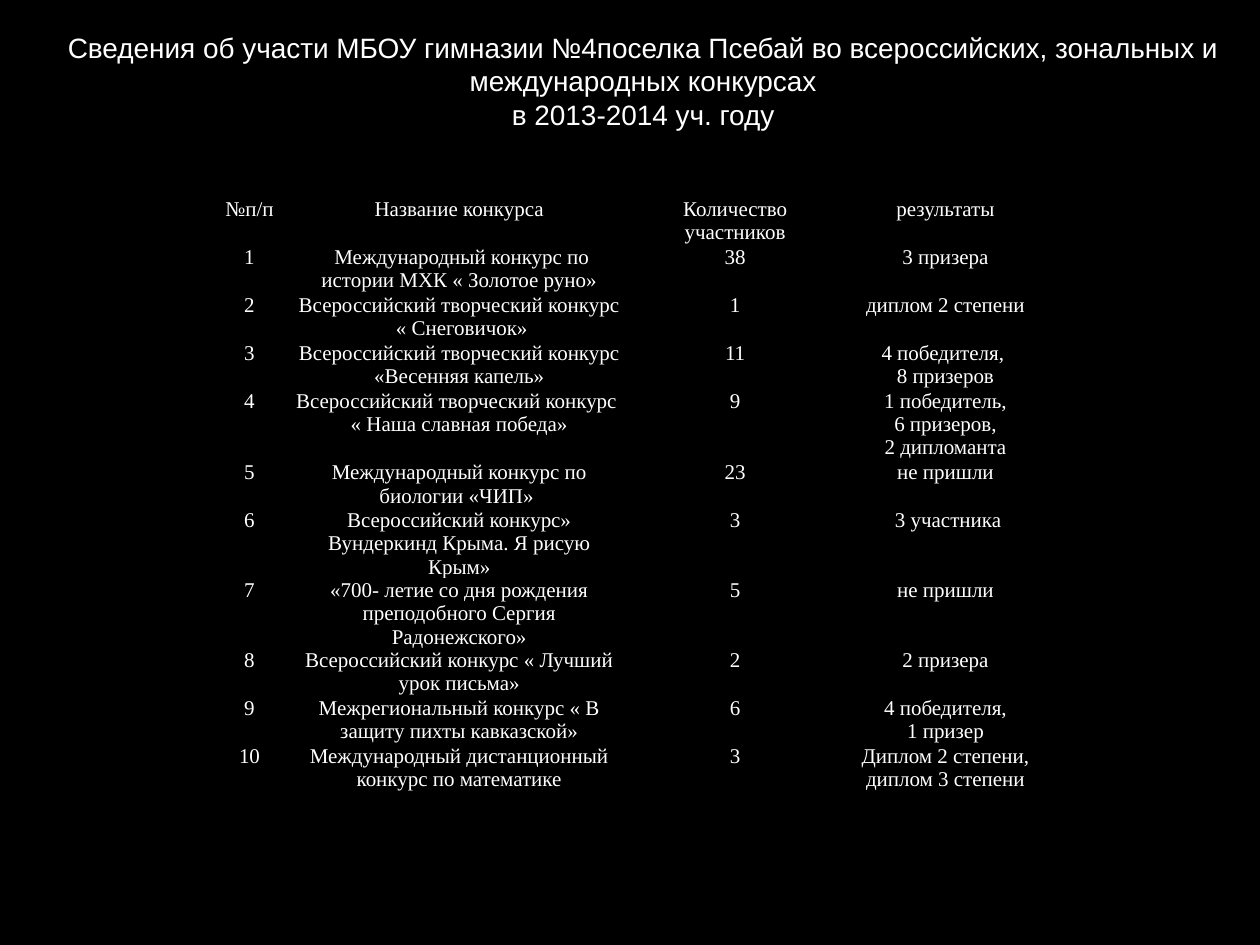
from lxml import etree
from pptx import Presentation
from pptx import util as u
from pptx.dml import color
from pptx.enum import text
from pptx.oxml import ns

TITLE = [
    "Сведения об участи МБОУ гимназии №4поселка Псебай во всероссийских, зональных и международных конкурсах",
    "в 2013-2014 уч. году",
]
HEADER = ("№п/п", "Название конкурса", "Количество участников", "результаты")
CONTESTS = [
    (" Международный конкурс по истории МХК « Золотое руно»", 38, "3 призера"),
    ("Всероссийский творческий конкурс\n « Снеговичок»", 1, "диплом 2 степени"),
    ("Всероссийский творческий конкурс «Весенняя капель»", 11, "4 победителя, \n8 призеров"),
    ("Всероссийский творческий конкурс \n« Наша славная победа»", 9,
     "1 победитель,\n6 призеров,\n2 дипломанта"),
    ("Международный конкурс по биологии «ЧИП» ", 23, "не пришли"),
    ("Всероссийский конкурс» Вундеркинд Крыма. Я рисую Крым»", 3, " 3 участника"),
    ("«700- летие со дня рождения преподобного Сергия Радонежского»", 5, "не пришли"),
    ("Всероссийский конкурс « Лучший урок письма»", 2, "2 призера"),
    ("Межрегиональный конкурс « В защиту пихты кавказской»", 6, "4 победителя,\n1 призер"),
    ("Международный дистанционный конкурс по математике", 3, "Диплом 2 степени, диплом 3 степени"),
]
COLUMNS = (0.62, 2.71, 1.67, 1.67)
LINE_HEIGHT = 0.19
BLACK, WHITE = "000000", "FFFFFF"


def rgb(value):
    """Turn a hex string into a colour."""
    return color.RGBColor.from_string(value)


def write(tf, lines, font="Arial", size=16, fill=WHITE):
    """Write centred paragraphs into a text frame."""
    for i, line in enumerate(lines):
        p = tf.paragraphs[0] if i == 0 else tf.add_paragraph()
        p.alignment = text.PP_ALIGN.CENTER
        r = p.add_run()
        r.text = line
        r.font.name, r.font.size = font, u.Pt(size)
        r.font.color.rgb = rgb(fill)


def add_borders(cell, fill=BLACK, width=1):
    """Draw a solid line on each side of a cell."""
    tc_pr = cell._tc.get_or_add_tcPr()
    for side in ("lnL", "lnR", "lnT", "lnB"):
        ln = etree.SubElement(tc_pr, ns.qn(f"a:{side}"), w=str(u.Pt(width)))
        solid = etree.SubElement(ln, ns.qn("a:solidFill"))
        etree.SubElement(solid, ns.qn("a:srgbClr"), val=fill)


def add_title(s):
    """Add the heading."""
    box = s.shapes.add_textbox(u.Inches(0.39), u.Inches(0.16), u.Inches(9.43), u.Inches(1.21))
    tf = box.text_frame
    tf.word_wrap = True
    tf.margin_top = u.Inches(0.08)
    write(tf, TITLE)


def add_contests(s):
    """Add the numbered table of contests."""
    rows = [HEADER] + [(i, *contest) for i, contest in enumerate(CONTESTS, 1)]
    heights = [LINE_HEIGHT * max(2, row[-1].count("\n") + 1) for row in rows]
    frame = s.shapes.add_table(len(rows), len(COLUMNS), u.Inches(1.67), u.Inches(1.57),
                               u.Inches(sum(COLUMNS)), u.Inches(sum(heights)))
    table = frame.table
    table.first_row = table.horz_banding = False
    for column, width in zip(table.columns, COLUMNS):
        column.width = u.Inches(width)
    for i, row in enumerate(rows):
        table.rows[i].height = u.Inches(heights[i])
        for j, value in enumerate(row):
            cell = table.cell(i, j)
            cell.margin_left = cell.margin_right = u.Inches(0.06)
            cell.margin_top = cell.margin_bottom = 0
            add_borders(cell)
            cell.fill.background()
            write(cell.text_frame, str(value).split("\n"), font="Times New Roman", size=12)


def main():
    """Build and save the slide."""
    prs = Presentation()
    prs.slide_width, prs.slide_height = u.Inches(10), u.Inches(7.5)
    s = prs.slides.add_slide(prs.slide_layouts[6])
    s.background.fill.solid()
    s.background.fill.fore_color.rgb = rgb(BLACK)
    add_contests(s)
    add_title(s)
    prs.save("out.pptx")


if __name__ == "__main__":
    main()
